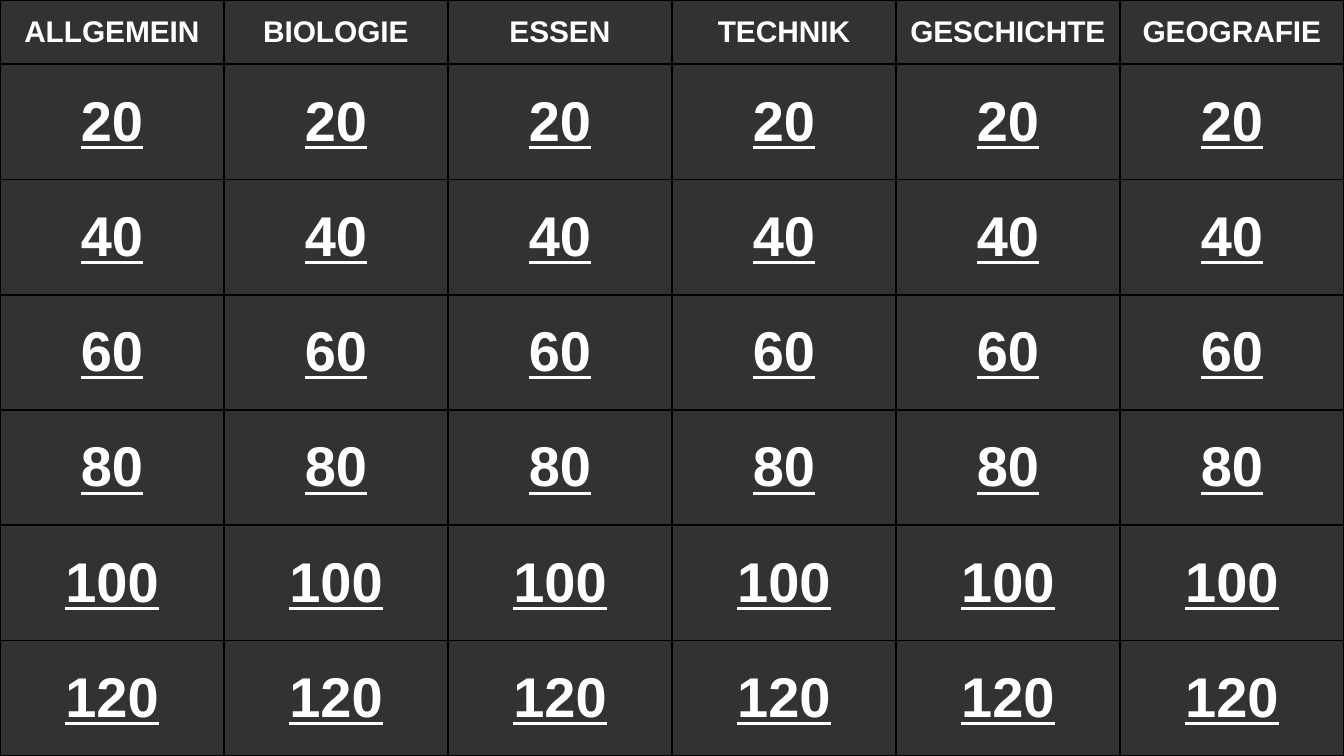
from lxml import etree
from pptx import Presentation
from pptx.dml.color import RGBColor
from pptx.enum.text import MSO_ANCHOR, PP_ALIGN
from pptx.oxml.ns import qn
from pptx.util import Inches, Pt

CENTER = PP_ALIGN.CENTER
MIDDLE = MSO_ANCHOR.MIDDLE

CATEGORIES = ["ALLGEMEIN", "BIOLOGIE", "ESSEN", "TECHNIK", "GESCHICHTE", "GEOGRAFIE"]
POINTS = range(20, 121, 20)
HEADER_SHARE = 0.085


def color(hex_string):
    return RGBColor.from_string(hex_string)


class QuizBoard:
    font_name = "Arial"
    background = "323232"
    text_color = "FFFFFF"
    line_color = "000000"
    line_width = Pt(1)
    side_margin = Inches(0.04)
    header_size = 16
    points_size = 30

    def __init__(self, presentation):
        self.width = presentation.slide_width
        self.height = presentation.slide_height
        self.slide = presentation.slides.add_slide(presentation.slide_layouts[6])
        fill = self.slide.background.fill
        fill.solid()
        fill.fore_color.rgb = color(self.background)

    def add_grid(self, categories, points, header_share):
        """Fill the slide with one column per category and one row per score."""
        table = self.slide.shapes.add_table(
            len(points) + 1, len(categories), 0, 0, self.width, self.height
        ).table
        table.first_row = table.horz_banding = False

        header_height = int(self.height * header_share)
        points_height = (self.height - header_height) // len(points)
        for index, row in enumerate(table.rows):
            row.height = points_height if index else header_height

        for column, category in enumerate(categories):
            self.write_cell(table.cell(0, column), category, self.header_size)
            for row, score in enumerate(points, start=1):
                self.write_cell(table.cell(row, column), str(score), self.points_size, True)

    def write_cell(self, cell, text, size, underline=False):
        self.add_borders(cell)
        cell.fill.background()
        cell.vertical_anchor = MIDDLE
        cell.margin_left = cell.margin_right = self.side_margin
        cell.margin_top = cell.margin_bottom = 0
        cell.text_frame.text = text
        paragraph = cell.text_frame.paragraphs[0]
        paragraph.alignment = CENTER
        font = paragraph.runs[0].font
        font.name = self.font_name
        font.size = Pt(size)
        font.bold = True
        font.underline = underline
        font.color.rgb = color(self.text_color)

    def add_borders(self, cell):
        """Draw all four cell edges; must run before the cell's fill is set."""
        properties = cell._tc.get_or_add_tcPr()
        for side in ("lnL", "lnR", "lnT", "lnB"):
            line = etree.SubElement(properties, qn(f"a:{side}"), w=str(self.line_width))
            fill = etree.SubElement(line, qn("a:solidFill"))
            etree.SubElement(fill, qn("a:srgbClr"), val=self.line_color)


def main():
    presentation = Presentation()
    presentation.slide_width = Inches(10)
    presentation.slide_height = presentation.slide_width * 9 // 16
    QuizBoard(presentation).add_grid(CATEGORIES, POINTS, HEADER_SHARE)
    presentation.save("out.pptx")


if __name__ == "__main__":
    main()
